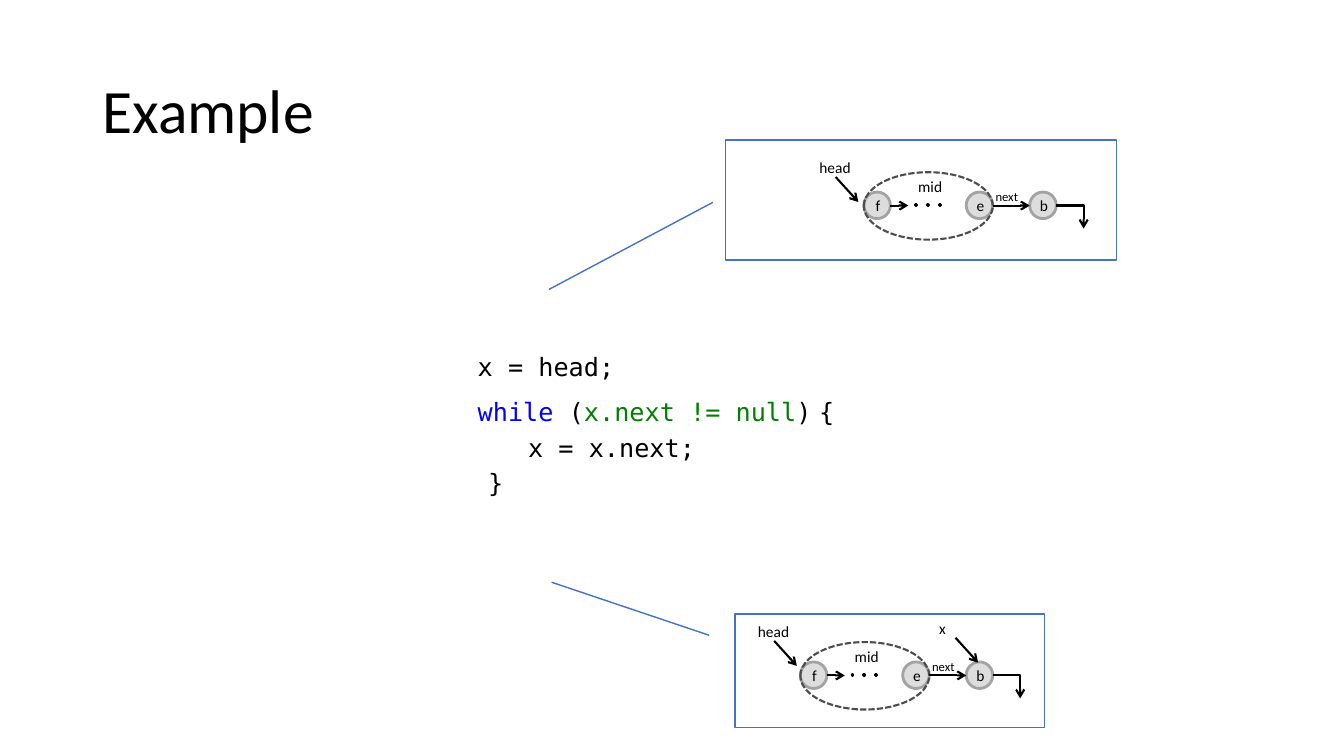
from lxml.etree import SubElement
from pptx import Presentation
from pptx.dml.color import RGBColor
from pptx.enum.dml import MSO_LINE
from pptx.enum.shapes import MSO_CONNECTOR, MSO_SHAPE
from pptx.enum.text import MSO_ANCHOR, MSO_AUTO_SIZE, PP_ALIGN
from pptx.oxml.ns import qn
from pptx.util import Cm, Pt

BLACK, BLUE, WHITE = "000000", "4472C4", "FFFFFF"
KEYWORD, CONDITION = "0000FF", "008000"
SANS, MONO = "Calibri", "DejaVu Sans Mono"

# Each code line: first-line indent in cm, then its spans (text, format values)
CODE = [
    (1.27, [("x = head;", {})]),
    (1.27, [("while", {"color": KEYWORD}), (" (", {}),
            ("x.next != null", {"color": CONDITION}), (")", {}),
            (" ", {"size": 24, "name": SANS}), ("{", {})]),
    (1.27, [("\tx = x.next;", {})]),
    (0, [("    }", {})]),
]


def color(hex_string):
    return RGBColor.from_string(hex_string)


def set_values(target, values):
    for name, value in values.items():
        setattr(target, name, value)


def add_span(para, text, size=11, name=SANS, color_hex=BLACK):
    span = para.add_run()
    span.text = text
    set_values(span.font, {"size": Pt(size), "name": name})
    span.font.color.rgb = color(color_hex)


def add_box(page, left, top, width, height, **frame_values):
    box = page.shapes.add_textbox(Cm(left), Cm(top), Cm(width), Cm(height))
    set_values(box.text_frame, frame_values)
    return box.text_frame


def add_label(page, text, left, top, width, height=0.74, size=11):
    frame = add_box(page, left, top, width, height, word_wrap=False,
                    auto_size=MSO_AUTO_SIZE.SHAPE_TO_FIT_TEXT)
    add_span(frame.paragraphs[0], text, size)


def add_outline(shapes, kind, left, top, width, height, fill, line, weight):
    shape = shapes.add_shape(kind, Cm(left), Cm(top), Cm(width), Cm(height))
    shape.shadow.inherit = False
    if fill:
        shape.fill.solid()
        shape.fill.fore_color.rgb = color(fill)
    else:
        shape.fill.background()
    shape.line.color.rgb = color(line)
    shape.line.width = Pt(weight)
    return shape


def add_callout(page, left, top, width, height, leader):
    callout = add_outline(page.shapes, MSO_SHAPE.LINE_CALLOUT_1,
                          left, top, width, height, WHITE, BLUE, 1)
    for index, value in enumerate(leader):
        callout.adjustments[index] = value


def add_node(page, text, left, top):
    node = add_outline(page.shapes, MSO_SHAPE.OVAL, left, top, 0.67, 0.67,
                       "DDDDDD", "A3A3A3", 2)
    set_values(node.text_frame, {
        "margin_left": Cm(0.05), "margin_right": 0,
        "margin_top": Cm(0.13), "margin_bottom": Cm(0.13),
        "vertical_anchor": MSO_ANCHOR.MIDDLE})
    para = node.text_frame.paragraphs[0]
    para.alignment = PP_ALIGN.CENTER
    add_span(para, text)


def add_arrow(page, x1, y1, x2, y2, bent=False):
    kind = MSO_CONNECTOR.ELBOW if bent else MSO_CONNECTOR.STRAIGHT
    arrow = page.shapes.add_connector(kind, Cm(x1), Cm(y1), Cm(x2), Cm(y2))
    arrow.line.color.rgb = color(BLACK)
    arrow.line.width = Pt(1.5)
    properties = arrow._element.spPr
    SubElement(properties.find(qn("a:ln")), qn("a:tailEnd"), type="arrow")
    SubElement(properties, qn("a:effectLst"))
    if bent:  # a single corner
        properties.find(qn("a:prstGeom")).set("prst", "bentConnector2")


def add_pointer(page, text, left, top, width):
    """A variable name with an arrow down to its node."""
    add_label(page, text, left, top, width)
    add_arrow(page, left + 0.66, top + 0.6, left + 1.23, top + 1.23)


def add_linked_list(page, left, top, pointers):
    """The list f ... e -> b; left and top are those of the dashed ring."""
    middle = top + 0.84
    for text, offset in (("f", 0), ("e", 2.58), ("b", 4.18)):
        add_node(page, text, left + offset, top + 0.5)

    # Dots for the nodes between f and e
    dots = page.shapes.add_group_shape()
    for index in range(3):
        add_outline(dots.shapes, MSO_SHAPE.RECTANGLE, left + 1.3 + 0.3 * index,
                    top + 0.81, 0.03, 0.03, BLACK, BLACK, 2)

    # Ring and its labels
    ring = add_outline(page.shapes, MSO_SHAPE.OVAL, left, top, 3.25, 1.7,
                       None, "4D4D4D", 1.5)
    ring.line.dash_style = MSO_LINE.SQUARE_DOT
    add_label(page, "mid", left + 1.12, top, 1.12)
    add_label(page, "next", left + 3.07, top + 0.3, 1.09, 0.64, 9)

    # Links, the last one to null
    add_arrow(page, left + 0.66, middle, left + 1.12, middle)
    add_arrow(page, left + 3.25, middle, left + 4.18, middle)
    add_arrow(page, left + 4.85, middle, left + 5.54, middle + 0.58, bent=True)

    for text, x, y, width in pointers:
        add_pointer(page, text, left + x, top + y, width)


def add_title(page, text):
    frame = add_box(page, 2.33, 1.01, 29.21, 3.68, word_wrap=True,
                    vertical_anchor=MSO_ANCHOR.MIDDLE)
    frame.paragraphs[0].line_spacing = 0.9
    add_span(frame.paragraphs[0], text, 44)


def add_code(page):
    frame = add_box(page, 10.52, 8.61, 12.7, 4.09, word_wrap=True,
                    auto_size=MSO_AUTO_SIZE.SHAPE_TO_FIT_TEXT)
    for index, (indent, spans) in enumerate(CODE):
        para = frame.add_paragraph() if index else frame.paragraphs[0]
        para.line_spacing = 1.15
        para._p.get_or_add_pPr().set("indent", str(int(Cm(indent))))
        for text, look in spans:
            add_span(para, text, look.get("size", 18), look.get("name", MONO),
                     look.get("color", BLACK))


def main():
    deck = Presentation()
    set_values(deck, {"slide_width": Cm(33.87), "slide_height": Cm(19.05)})
    page = deck.slides.add_slide(deck.slide_layouts[6])

    add_title(page, "Example")
    add_code(page)

    # State after the loop
    add_callout(page, 18.52, 15.47, 7.8, 2.87, (0.188, -0.083, -0.278, -0.592))
    add_linked_list(page, 20.17, 16.18,
                    [("head", -1.32, -0.63, 1.3), ("x", 3.25, -0.71, 0.69)])

    # State before the loop
    add_callout(page, 18.28, 3.53, 9.86, 3.02, (0.52, -0.032, 1.247, -0.451))
    add_linked_list(page, 21.77, 4.34, [("head", -1.37, -0.48, 1.3)])

    deck.save("out.pptx")


if __name__ == "__main__":
    main()
